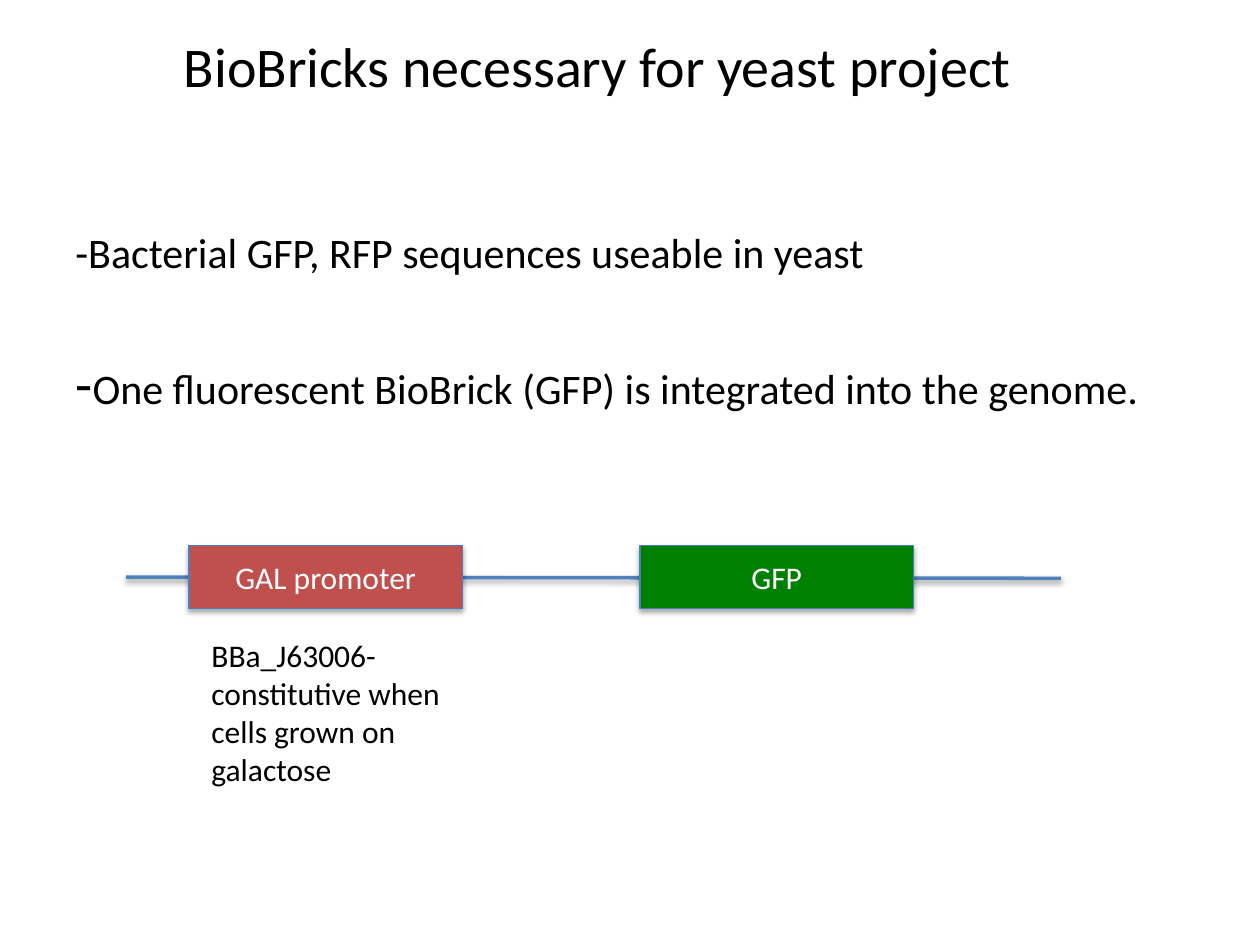
from lxml.etree import SubElement
from pptx import Presentation
from pptx.dml.color import RGBColor
from pptx.enum.shapes import MSO_CONNECTOR, MSO_SHAPE
from pptx.enum.text import MSO_ANCHOR, PP_ALIGN
from pptx.oxml.ns import qn
from pptx.util import Inches, Pt

# Content
TITLE = "BioBricks necessary for yeast project"
# Each point: space before in points, then (text, size name) runs
POINTS = [
    (0, [("-Bacterial GFP, RFP sequences useable in yeast", "body")]),
    (41, [("-", "title"),
          ("One fluorescent BioBrick (GFP) is integrated into the genome.", "body")]),
]
# Each gene part: label, left edge, fill name
GENE_PARTS = [("GAL promoter", 1.5, "promoter"), ("GFP", 5.08, "gfp")]
PROMOTER_NOTE = ["BBa_J63006-", "constitutive when", "cells grown on", "galactose"]

THEME = {
    "font": "Calibri",
    "sizes": {"title": 32, "body": 24, "label": 18},
    "colors": {"text": "000000", "label": "FFFFFF", "promoter": "C0504D",
               "gfp": "008000", "strand": "4F81BD", "outline": "4B7EBC",
               "shadow": "000000"},
}
PART_TOP, PART_WIDTH, PART_HEIGHT = 4.33, 2.17, 0.5


def color(name):
    return RGBColor.from_string(THEME["colors"][name])


def add_span(para, text, size, color_name="text"):
    span = para.add_run()
    span.text = text
    span.font.name = THEME["font"]
    span.font.size = Pt(THEME["sizes"][size])
    span.font.color.rgb = color(color_name)


def add_box(page, left, top, width, height, wrap=True):
    box = page.shapes.add_textbox(*map(Inches, (left, top, width, height)))
    box.text_frame.word_wrap = wrap
    return box.text_frame


def next_para(frame, index):
    return frame.paragraphs[0] if index == 0 else frame.add_paragraph()


def add_shadow(shape, distance, opacity):
    """Give a shape a soft shadow straight below it."""
    effects = SubElement(shape._element.spPr, qn("a:effectLst"))
    shadow = SubElement(effects, qn("a:outerShdw"), blurRad=str(Pt(3.1)),
                        dist=str(Pt(distance)), dir="5400000", rotWithShape="0")
    tint = SubElement(shadow, qn("a:srgbClr"), val=THEME["colors"]["shadow"])
    SubElement(tint, qn("a:alpha"), val=str(opacity * 1000))


def add_gene_part(page, label, left, fill):
    part = page.shapes.add_shape(
        MSO_SHAPE.RECTANGLE,
        *map(Inches, (left, PART_TOP, PART_WIDTH, PART_HEIGHT)))
    part.fill.solid()
    part.fill.fore_color.rgb = color(fill)
    part.line.color.rgb = color("outline")
    part.line.width = Pt(0.75)
    add_shadow(part, 1.8, 35)
    part.text_frame.vertical_anchor = MSO_ANCHOR.MIDDLE
    para = part.text_frame.paragraphs[0]
    para.alignment = PP_ALIGN.CENTER
    add_span(para, label, "label", "label")


def main():
    deck = Presentation()
    deck.slide_width, deck.slide_height = Inches(10), Inches(7.5)
    page = deck.slides.add_slide(deck.slide_layouts[6])

    # Title
    frame = add_box(page, 0.58, 0.17, 8.33, 0.7)
    frame.vertical_anchor = MSO_ANCHOR.MIDDLE
    frame.paragraphs[0].alignment = PP_ALIGN.CENTER
    add_span(frame.paragraphs[0], TITLE, "title")

    # Points with a hanging indent
    frame = add_box(page, 0.5, 1.75, 9, 4.95)
    for index, (space, spans) in enumerate(POINTS):
        para = next_para(frame, index)
        para.space_before = Pt(space)
        properties = para._p.get_or_add_pPr()
        properties.set("marL", str(Inches(0.38)))
        properties.set("indent", str(Inches(-0.38)))
        for text, size in spans:
            add_span(para, text, size)

    # DNA strand behind the gene parts
    strand = page.shapes.add_connector(
        MSO_CONNECTOR.STRAIGHT, *map(Inches, (1, 4.58, 8.42, 4.59)))
    strand.line.color.rgb = color("strand")
    strand.line.width = Pt(2)
    add_shadow(strand, 1.6, 38)

    # Gene parts
    for label, left, fill in GENE_PARTS:
        add_gene_part(page, label, left, fill)

    # Note under the promoter
    frame = add_box(page, 1.58, 5, 2.14, 1.31, wrap=False)
    for index, text in enumerate(PROMOTER_NOTE):
        add_span(next_para(frame, index), text, "label")

    deck.save("out.pptx")


if __name__ == "__main__":
    main()
